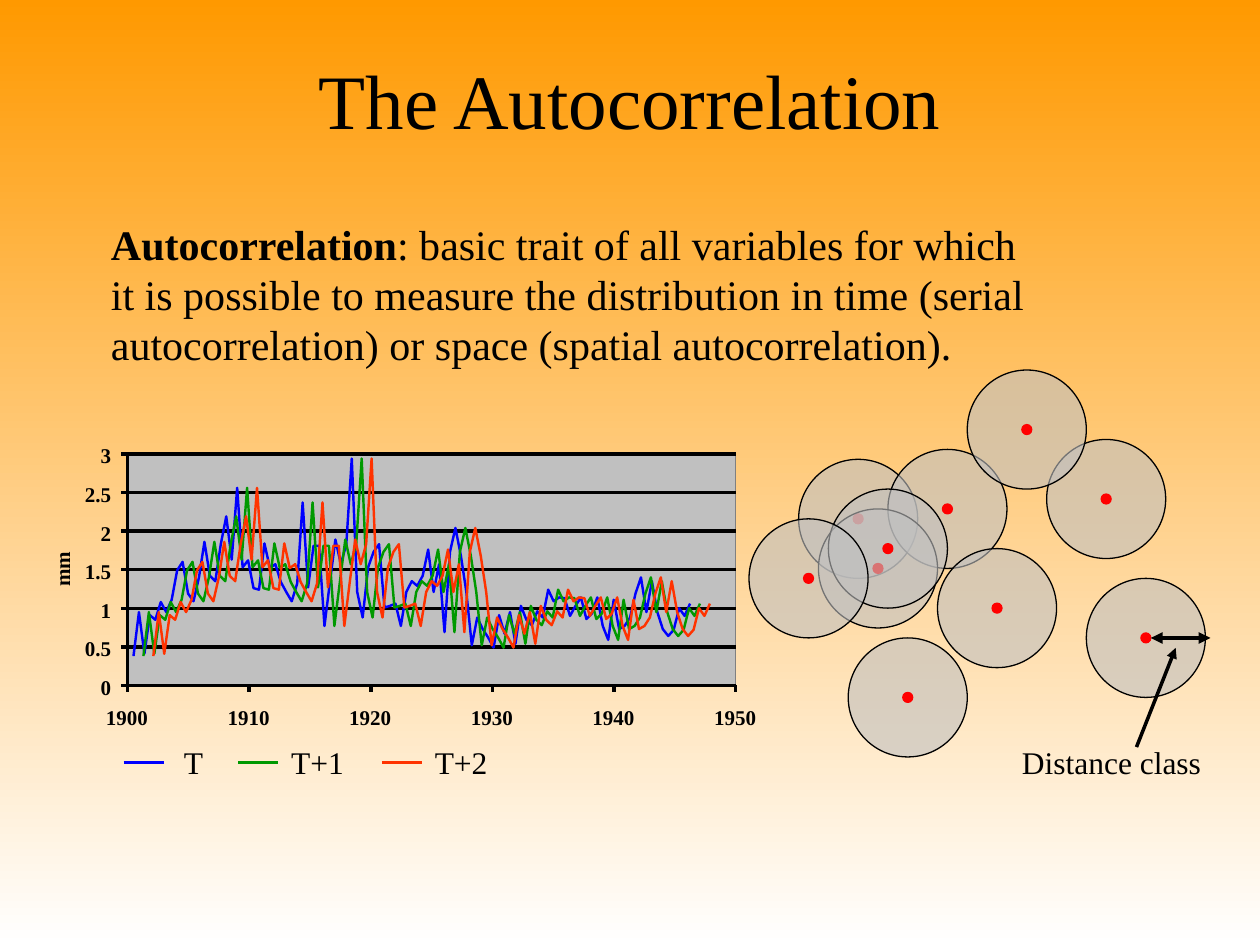
"""Build the autocorrelation slide on a grid of two-millimetre cells."""
from lxml.etree import SubElement
from pptx import Presentation
from pptx.dml.color import RGBColor
from pptx.enum.shapes import MSO_CONNECTOR, MSO_SHAPE
from pptx.enum.text import PP_ALIGN as Align
from pptx.oxml.ns import qn
from pptx.util import Mm, Pt

CELL = 2
FONT = "Times New Roman"
color = RGBColor.from_string
BLACK, GREY, RED = "000000", "C0C0C0", "FF0000"

deck = Presentation()
deck.slide_width, deck.slide_height = Mm(127 * CELL), Mm(95.25 * CELL)
page = deck.slides.add_slide(deck.slide_layouts[6])
backdrop = page.background.fill
backdrop.gradient()
backdrop.gradient_angle = 270
for stop, shade in zip(backdrop.gradient_stops, ("FF9900", "FFFFFF")):
    stop.color.rgb = color(shade)


def write(spans, place, size, inset=0, align=Align.LEFT, wrap=False, bold=False):
    box = page.shapes.add_textbox(*[Mm(CELL * n) for n in place])
    frame = box.text_frame
    frame.word_wrap = wrap
    frame.margin_left = frame.margin_right = Mm(CELL * inset * 2)
    frame.margin_top = frame.margin_bottom = Mm(CELL * inset)
    para = frame.paragraphs[0]
    para.alignment = align
    para.font.name, para.font.size, para.font.bold = FONT, Pt(size), bold
    para.font.color.rgb = color(BLACK)
    for text in spans:
        para.add_run().text = text
    return box


def draw_line(start, end, width=0, shade=BLACK, arrows=()):
    ends = [Mm(CELL * n) for n in (*start, *end)]
    line = page.shapes.add_connector(MSO_CONNECTOR.STRAIGHT, *ends)
    line.line.width = Pt(width)
    line.line.color.rgb = color(shade)
    for arrow in arrows:
        SubElement(line.line._get_or_add_ln(), qn(f"a:{arrow}"), type="triangle")
    SubElement(line._element.spPr, qn("a:effectLst"))


write(["The Autocorrelation"], (6.35, 3.81, 114.3, 15.88), 44, 1.5, Align.CENTER, True)
body = write(
    ["Autocorrelation", ": basic trait of all variables for which it is possible to measure the "
     "distribution in time (serial autocorrelation) or space (spatial autocorrelation)."],
    (9.91, 21.34, 96.4, 16.64), 24, 0.64, wrap=True)
body.text_frame.paragraphs[0].runs[0].font.bold = True

centers = [(86.5, 52.3), (95.5, 51.3), (88.5, 57.3), (89.5, 55.3), (111.5, 50.3),
           (100.5, 61.3), (81.5, 58.3), (115.5, 64.3), (103.5, 43.3), (91.5, 70.3)]
for column, row in centers:
    group = page.shapes.add_group_shape()
    for size, fill, edge in ((12, GREY, BLACK), (1, RED, RED)):
        place = (column - size / 2, row - size / 2, size, size)
        disc = group.shapes.add_shape(MSO_SHAPE.OVAL, *[Mm(CELL * n) for n in place])
        disc.shadow.inherit = False
        disc.fill.solid()
        disc.fill.fore_color.rgb = color(fill)
        disc.line.color.rgb = color(edge)
        disc.line.width = Pt(0.75)
        if fill == GREY:
            SubElement(disc._element.spPr.find(".//" + qn("a:srgbClr")), qn("a:alpha"), val="60000")

draw_line((116, 64.3), (122, 64.3), 2.25, arrows=("headEnd", "tailEnd"))
write(["Distance class"], (101.73, 74.3, 20.83, 5.08), 18, 0.64)
draw_line((114.55, 75.3), (118.5, 65.3), 2, arrows=("tailEnd",))

LEFT, TOP, DECADE, HALF = 12.85, 45.75, 12.26, 3.89
RIGHT, BOTTOM = LEFT + 5 * DECADE, TOP + 6 * HALF
TICK = 0.64
plot = page.shapes.add_shape(
    MSO_SHAPE.RECTANGLE, *[Mm(CELL * n) for n in (LEFT, TOP, RIGHT - LEFT, BOTTOM - TOP)])
plot.shadow.inherit = False
plot.fill.solid()
plot.fill.fore_color.rgb = color(GREY)
plot.line.color.rgb = color("808080")
plot.line.width = Pt(0.5)

for step in range(7):
    level = BOTTOM - step * HALF
    draw_line((LEFT, level), (RIGHT, level))
    draw_line((LEFT - TICK, level), (LEFT, level))
    width = 2.65 if step % 2 else 1.06
    write([f"{step / 2:g}"], (11.2 - width, level - 1.1, width, 2.54), 12, align=Align.RIGHT, bold=True)
draw_line((LEFT, TOP), (LEFT, BOTTOM))
for step in range(6):
    column = LEFT + step * DECADE
    draw_line((column, BOTTOM + TICK), (column, BOTTOM))
    write([str(1900 + 10 * step)], (column - 2.2, 71, 4.3, 2.54), 12, align=Align.CENTER, bold=True)
unit = write(["mm"], (4.45, 56.13, 3.56, 2.54), 12, align=Align.CENTER, bold=True)
unit.rotation = 270

growth = [
    0.38, 0.95, 0.41, 0.91, 0.85, 1.08, 0.95, 1.11, 1.49, 1.6, 1.19, 1.09, 1.4, 1.86, 1.42,
    1.35, 1.83, 2.19, 1.63, 2.56, 1.53, 1.62, 1.26, 1.24, 1.84, 1.52, 1.57, 1.34, 1.21, 1.09,
    1.32, 2.37, 1.27, 1.81, 1.81, 0.77, 1.34, 1.89, 1.57, 1.83, 2.94, 1.21, 0.88, 1.53, 1.73,
    1.83, 1.01, 1.03, 1.06, 0.77, 1.21, 1.35, 1.29, 1.42, 1.76, 1.21, 1.57, 0.69, 1.73, 2.04,
    1.68, 1.21, 0.52, 0.88, 0.73, 0.62, 0.49, 0.91, 0.67, 0.95, 0.54, 1.03, 0.85, 0.78, 0.96,
    0.88, 1.24, 1.09, 1.14, 1.13, 0.9, 1.03, 1.14, 0.86, 0.93, 1.14, 0.77, 0.59, 1.11, 0.73,
    0.77, 0.88, 1.19, 1.4, 0.95, 1.35, 0.95, 0.73, 0.64, 0.72, 1, 0.9, 1.06]
series = [("T", "0000FF", 12.45, 17.27, 4.45), ("T+1", "009900", 24, 28.07, 8.13),
          ("T+2", "FF3300", 38.5, 42.55, 8.13)]
for lag, (name, shade, key, label, width) in enumerate(series):
    points = [(Mm(CELL * (13.46 + lag + 0.55 * index)), Mm(CELL * (BOTTOM - 2 * HALF * value)))
              for index, value in enumerate(growth)]
    builder = page.shapes.build_freeform(*points[0])
    builder.add_line_segments(points[1:], close=False)
    curve = builder.convert_to_shape()
    curve.shadow.inherit = False
    curve.fill.background()
    curve.line.color.rgb = color(shade)
    curve.line.width = Pt(1.38)
    draw_line((key, 76.85), (key + 4.06, 76.85), 2, shade)
    write([name], (label, 74.3, width, 5.08), 18, 0.64)

deck.save("out.pptx")
